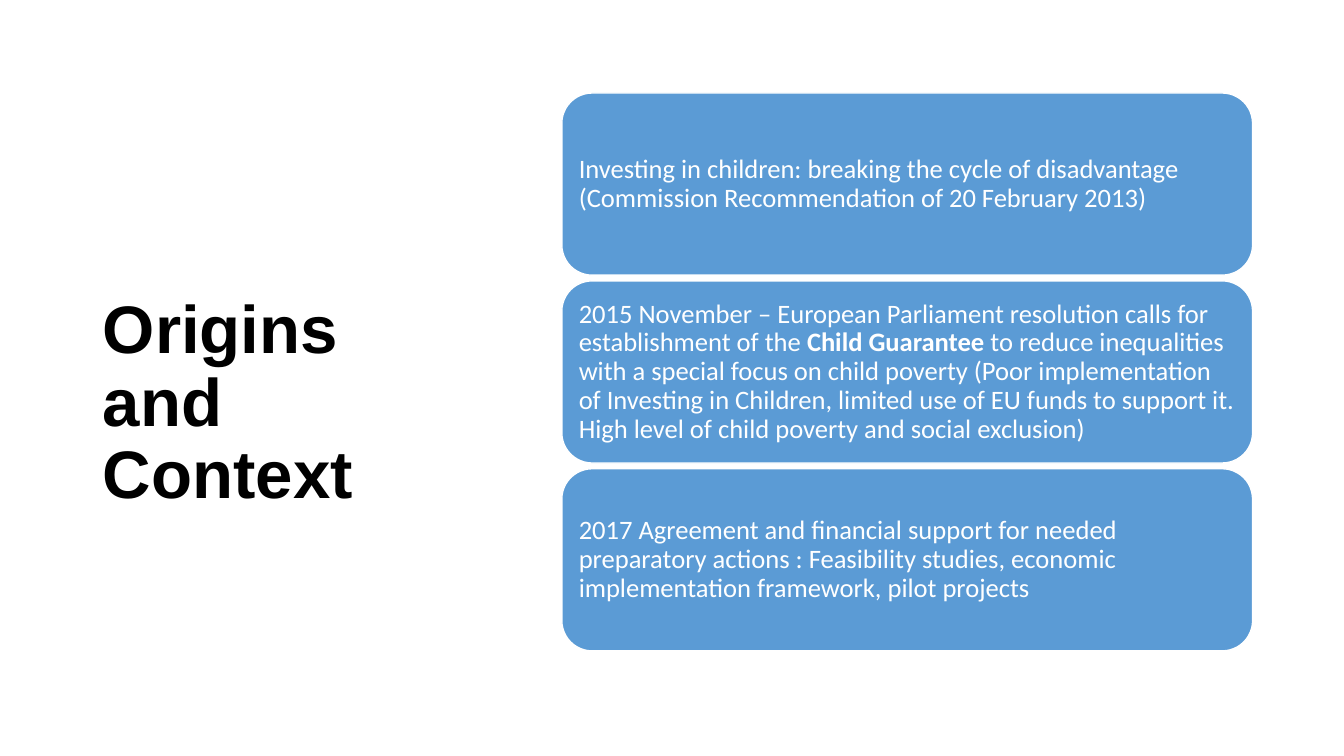
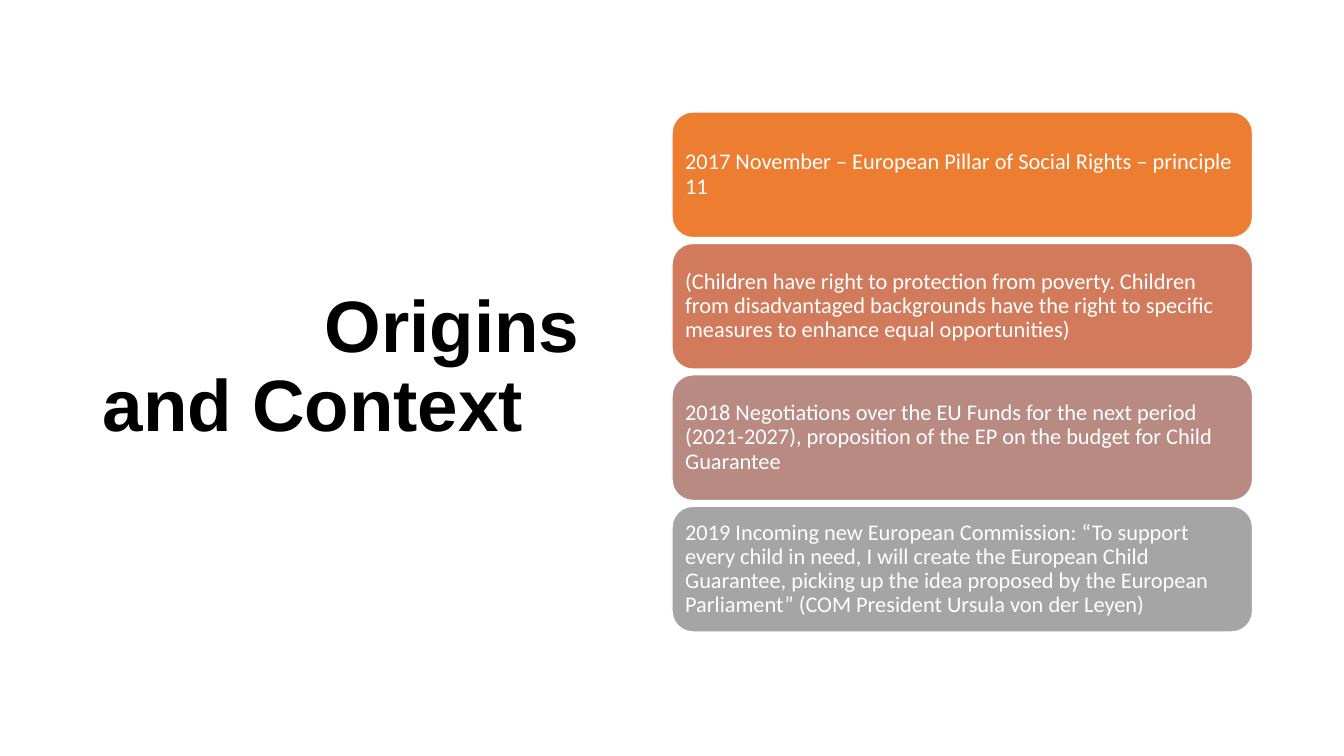
from pptx import Presentation
from pptx.dml.color import RGBColor
from pptx.enum.shapes import MSO_SHAPE as Preset
from pptx.enum.text import MSO_ANCHOR as Anchor, MSO_AUTO_SIZE as AutoSize, PP_ALIGN as Align
from pptx.util import Inches, Pt

COLORS = {
    "title": "000000",
    "text": "FFFFFF",
    "edge": "FFFFFF",
    "blue": "5B9BD5",
    "orange": "ED7D31",
    "terracotta": "D17B5C",
    "rose": "B98A82",
    "gray": "A5A5A5",
}
TITLE_FONT, CARD_FONT = "Arial", "Calibri"

deck = Presentation()
deck.slide_width, deck.slide_height = Inches(13.33), Inches(7.5)

# Grid of 100 columns by 100 rows
COL, ROW = deck.slide_width / 100, deck.slide_height / 100
TITLE_LEFT, TITLE_TOP, TITLE_ROWS = 6.9, 8.1, 81.2
CARD_RIGHT, CARD_GAP = 93.2, 0.75


def place(shape, left, top, width, height):
    shape.left, shape.top = round(left * COL), round(top * ROW)
    shape.width, shape.height = round(width * COL), round(height * ROW)


def add_span(para, text, font, size, color, bold=False):
    span = para.add_run()
    span.text = text
    span.font.name, span.font.size, span.font.bold = font, Pt(size), bold
    span.font.color.rgb = RGBColor.from_string(COLORS[color])


# Content: each card is a fill and its runs of (text, bold)
pages = [
    {
        "title_cols": 27.7, "title_size": 48, "title_drop": 0.77, "title_indent": 0,
        "left": 41.8, "top": 12.3, "bottom": 86.1, "size": 19, "inset": 0.08,
        "cards": [
            ("blue", [("Investing in children: breaking the cycle of disadvantage "
                       "(Commission Recommendation of 20 February 2013)", False)]),
            ("blue", [("2015 November – European Parliament resolution calls for "
                       "establishment of the ", False),
                      ("Child Guarantee ", True),
                      ("to reduce inequalities with a special focus on child poverty "
                       "(Poor implementation of Investing in Children, limited use of EU "
                       "funds to support it. High level of child poverty and social "
                       "exclusion)", False)]),
            ("blue", [("2017 Agreement and financial support for needed preparatory "
                       "actions : Feasibility studies, economic implementation framework, "
                       "pilot projects", False)]),
        ],
    },
    {
        "title_cols": 39.9, "title_size": 52, "title_drop": 0.05, "title_indent": 2.2,
        "left": 50, "top": 14.8, "bottom": 83.6, "size": 16, "inset": 0.07,
        "cards": [
            ("orange", [("2017 November – European Pillar of Social Rights – principle 11",
                         False)]),
            ("terracotta", [("(Children have right to protection from poverty. Children from "
                             "disadvantaged backgrounds have the right to specific measures "
                             "to enhance equal opportunities)", False)]),
            ("rose", [("2018 Negotiations over the EU Funds for the next period "
                       "(2021-2027), proposition of the EP on the budget for Child "
                       "Guarantee", False)]),
            ("gray", [("2019 Incoming new European Commission: “To support every child in "
                       "need, I will create the European Child Guarantee, picking up the "
                       "idea proposed by the European Parliament” (COM President Ursula "
                       "von der Leyen)", False)]),
        ],
    },
]

for content in pages:
    page = deck.slides.add_slide(deck.slide_layouts[5])

    # Title, lowered by its top inset or indented on its first line
    title = page.shapes.title
    place(title, TITLE_LEFT, TITLE_TOP, content["title_cols"], TITLE_ROWS)
    frame = title.text_frame
    frame.word_wrap, frame.auto_size = True, AutoSize.NONE
    frame.vertical_anchor = Anchor.MIDDLE
    frame.margin_top = Inches(content["title_drop"])
    para = frame.paragraphs[0]
    para.alignment, para.line_spacing = Align.LEFT, 0.9
    indent = Inches(content["title_indent"])
    para._p.get_or_add_pPr().set("indent", str(indent))
    add_span(para, "Origins and Context", TITLE_FONT, content["title_size"], "title", True)

    # Stack of equal cards
    cards = content["cards"]
    pitch = (content["bottom"] - content["top"] + CARD_GAP) / len(cards)
    for row, (fill, spans) in enumerate(cards):
        card = page.shapes.add_shape(Preset.ROUNDED_RECTANGLE, 0, 0, 0, 0)
        place(card, content["left"], content["top"] + row * pitch,
              CARD_RIGHT - content["left"], pitch - CARD_GAP)
        card.shadow.inherit = False
        card.fill.solid()
        card.fill.fore_color.rgb = RGBColor.from_string(COLORS[fill])
        card.line.color.rgb = RGBColor.from_string(COLORS["edge"])
        card.line.width = Pt(1)

        frame = card.text_frame
        frame.word_wrap, frame.vertical_anchor = True, Anchor.MIDDLE
        frame.margin_left = frame.margin_right = Inches(content["inset"])
        frame.margin_top = frame.margin_bottom = Inches(content["inset"])
        para = frame.paragraphs[0]
        para.alignment, para.line_spacing = Align.LEFT, 0.9
        for text, bold in spans:
            add_span(para, text, CARD_FONT, content["size"], "text", bold)

deck.save("out.pptx")
